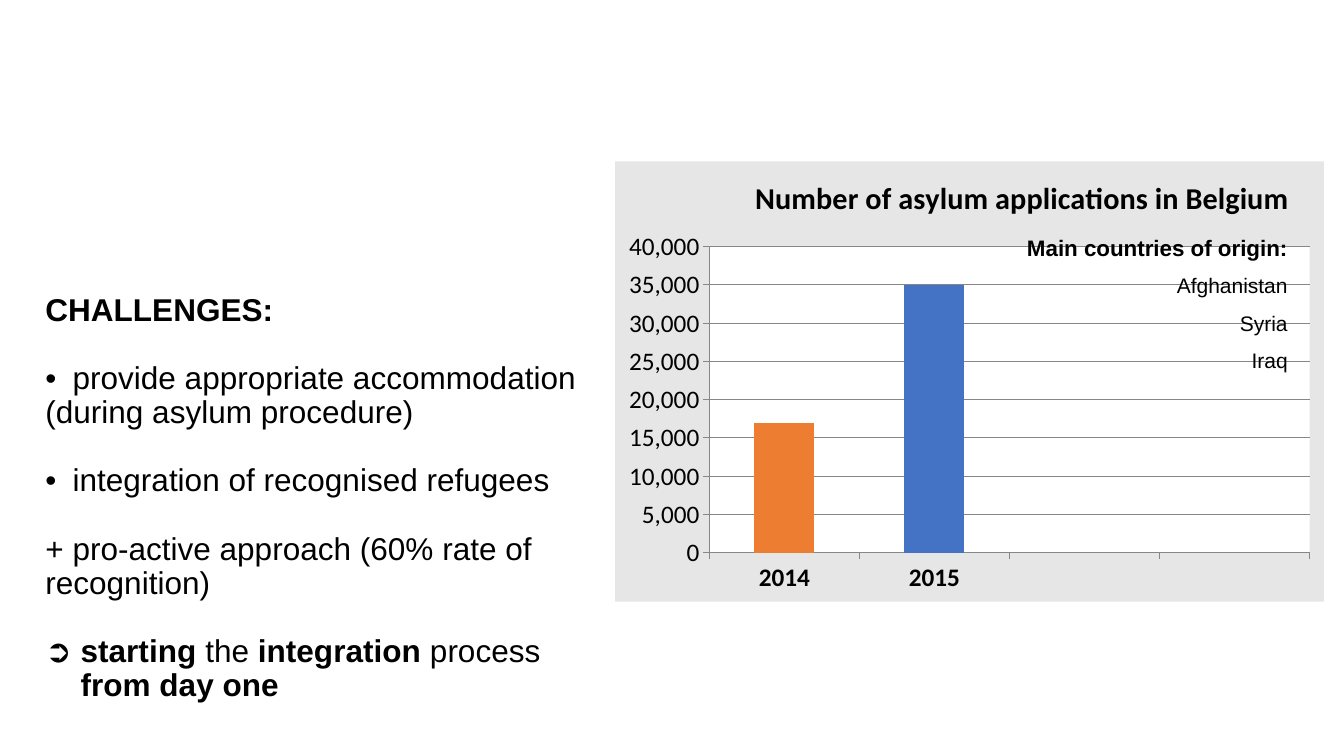
from dataclasses import dataclass

from lxml import etree
from pptx import Presentation
from pptx.chart.data import CategoryChartData
from pptx.dml.color import RGBColor
from pptx.enum.chart import XL_CHART_TYPE, XL_TICK_MARK
from pptx.enum.text import MSO_ANCHOR, MSO_AUTO_SIZE, PP_ALIGN
from pptx.oxml import parse_xml
from pptx.oxml.ns import nsdecls, qn
from pptx.util import Inches, Pt

COLUMN = XL_CHART_TYPE.COLUMN_CLUSTERED
OUTSIDE, NO_TICK = XL_TICK_MARK.OUTSIDE, XL_TICK_MARK.NONE
LEFT, RIGHT = PP_ALIGN.LEFT, PP_ALIGN.RIGHT
BOTTOM = MSO_ANCHOR.BOTTOM
NO_AUTOFIT = MSO_AUTO_SIZE.NONE

SLIDE_W, SLIDE_H = Inches(13.33), Inches(7.5)
GRID_CELL = Inches(0.1)


@dataclass(frozen=True)
class Theme:
    text: RGBColor = RGBColor(0, 0, 0)
    panel: RGBColor = RGBColor(0xE7, 0xE6, 0xE6)
    plot: RGBColor = RGBColor(0xFF, 0xFF, 0xFF)
    grid: RGBColor = RGBColor(0x87, 0x87, 0x87)
    bar: RGBColor = RGBColor(0x44, 0x72, 0xC4)
    first_bar: RGBColor = RGBColor(0xED, 0x7D, 0x31)
    body_font: str = "Arial"
    chart_font: str = "Calibri"
    challenge_size: float = 22.5
    chart_title_size: float = 21.6
    axis_size: float = 18
    origin_head_size: float = 16
    origin_size: float = 15


THEME = Theme()

# Each challenge is a list of (wording, bold) runs
CHALLENGES = [
    [("CHALLENGES:", True)],
    [("•\tprovide appropriate accommodation (during asylum procedure)", False)],
    [("•\tintegration of recognised refugees", False)],
    [("+ pro-active approach (60% rate of recognition)", False)],
    [("➲\tstarting ", True), ("the ", False), ("integration ", True),
     ("process\v", False), ("from day one", True)],
]
APPLICATIONS = {"categories": ["2014", "2015", "", ""],
                "values": [17000, 35000, None, None]}
ORIGINS = ["Main countries of origin:", "Afghanistan", "Syria", "Iraq"]


def grid_box(column, row, columns, rows):
    """Turn columns and rows of the slide grid into a box."""
    return [int(GRID_CELL * cells) for cells in (column, row, columns, rows)]


def apply(target, formats):
    for attribute, value in formats.items():
        setattr(target, attribute, value)


def format_font(font, size, bold=False, name=THEME.body_font):
    apply(font, {"size": Pt(size), "bold": bold, "name": name})
    font.color.rgb = THEME.text


def add_run(paragraph, wording, size, bold):
    """Add a run; a vertical tab at its end becomes a line break."""
    run = paragraph.add_run()
    run.text = wording.rstrip("\v")
    format_font(run.font, size, bold)
    if wording.endswith("\v"):
        paragraph.add_line_break()


def next_paragraph(frame, index):
    return frame.paragraphs[0] if index == 0 else frame.add_paragraph()


def add_challenges(slide, box):
    """Challenges in the title placeholder, set from the bottom up."""
    title = slide.shapes.title
    apply(title, dict(zip(("left", "top", "width", "height"), box)))
    frame = title.text_frame
    apply(frame, {"word_wrap": True, "vertical_anchor": BOTTOM,
                  "auto_size": NO_AUTOFIT})
    for index, runs in enumerate(CHALLENGES):
        paragraph = next_paragraph(frame, index)
        properties = paragraph._p.get_or_add_pPr()
        if runs[0][0].startswith("➲"):
            hang = Inches(0.35)
            properties.set("marL", str(hang))
            properties.set("indent", str(-hang))
        elif runs[0][0].startswith("•"):
            stops = etree.SubElement(properties, qn("a:tabLst"))
            stop = etree.SubElement(stops, qn("a:tab"))
            stop.set("pos", str(Inches(0.27)))
            stop.set("algn", "l")
        apply(paragraph, {"alignment": LEFT, "line_spacing": 0.9,
                          "space_before": Pt(24.5 if index else 0)})
        for wording, bold in runs:
            add_run(paragraph, wording, THEME.challenge_size, bold)


def place_in_chart(parent, before, percents, inner=False):
    """Fix a chart part at percents of the chart area: x, y, width, height."""
    parts = ['<c:layoutTarget val="inner"/>'] if inner else []
    parts += ['<c:xMode val="edge"/>', '<c:yMode val="edge"/>']
    parts += [f'<c:{name} val="{percent / 100}"/>'
              for name, percent in zip("xywh", percents)]
    for old in parent.findall(qn("c:layout")):
        parent.remove(old)
    layout = parse_xml(f'<c:layout {nsdecls("c")}><c:manualLayout>'
                       f'{"".join(parts)}</c:manualLayout></c:layout>')
    if before is None:
        parent.insert(0, layout)
    else:
        parent.find(qn(before)).addnext(layout)


def fill_area(parent, color, before=None):
    area = parse_xml(f'<c:spPr {nsdecls("c", "a")}><a:solidFill>'
                     f'<a:srgbClr val="{color}"/></a:solidFill>'
                     '<a:ln><a:noFill/></a:ln></c:spPr>')
    if before is None:
        parent.append(area)
    else:
        parent.find(qn(before)).addprevious(area)


def add_applications_chart(slide, box):
    """Column chart of asylum applications on a grey panel."""
    data = CategoryChartData(number_format="#,##0")
    data.categories = APPLICATIONS["categories"]
    data.add_series("Series 1", APPLICATIONS["values"])
    chart = slide.shapes.add_chart(COLUMN, *box, data).chart
    chart.has_legend = False
    format_font(chart.font, THEME.axis_size, name=THEME.chart_font)

    # Heading
    chart.has_title = True
    heading = chart.chart_title.text_frame
    heading.text = "Number of asylum applications in Belgium"
    format_font(heading.paragraphs[0].runs[0].font, THEME.chart_title_size,
                True, THEME.chart_font)
    chart.chart_title.include_in_layout = False

    # Axes
    years, counts = chart.category_axis, chart.value_axis
    for axis, bold in ((years, True), (counts, False)):
        apply(axis, {"major_tick_mark": OUTSIDE, "minor_tick_mark": NO_TICK})
        axis.format.line.color.rgb = THEME.grid
        format_font(axis.tick_labels.font, THEME.axis_size, bold,
                    THEME.chart_font)
    apply(counts, {"minimum_scale": 0, "maximum_scale": 40000,
                   "major_unit": 5000, "has_major_gridlines": True})
    counts.major_gridlines.format.line.color.rgb = THEME.grid
    apply(counts.tick_labels, {"number_format": "#,##0",
                               "number_format_is_linked": False})

    # Bars
    plot = chart.plots[0]
    apply(plot, {"gap_width": 150, "vary_by_categories": False})
    applications = plot.series[0]
    for bar, color in ((applications, THEME.bar),
                       (applications.points[0], THEME.first_bar)):
        bar.format.fill.solid()
        bar.format.fill.fore_color.rgb = color

    # Panel, plot area and their places
    space = chart._chartSpace
    plot_area = space.chart.plotArea
    place_in_chart(plot_area, None, (13.3, 19.4, 84.7, 69.5), inner=True)
    place_in_chart(space.chart.find(qn("c:title")), "c:tx", (19, 2.3))
    fill_area(plot_area, THEME.plot)
    fill_area(space, THEME.panel, before="c:txPr")


def add_origins(slide, box):
    """Right-aligned countries of origin over the plot."""
    frame = slide.shapes.add_textbox(*box).text_frame
    frame.word_wrap = True
    for index, origin in enumerate(ORIGINS):
        is_head = index == 0
        paragraph = next_paragraph(frame, index)
        if is_head:
            paragraph._p.get_or_add_pPr().set("marR", str(Inches(0.08)))
        apply(paragraph, {"alignment": RIGHT, "line_spacing": 0.9,
                          "space_before": Pt(0 if is_head else 10.5)})
        size = THEME.origin_head_size if is_head else THEME.origin_size
        add_run(paragraph, origin, size, is_head)


def main():
    deck = Presentation()
    apply(deck, {"slide_width": SLIDE_W, "slide_height": SLIDE_H})
    title_only = deck.slide_layouts[5]
    slide = deck.slides.add_slide(title_only)
    add_challenges(slide, grid_box(3.5, 28.5, 63.2, 41.8))
    add_applications_chart(slide, grid_box(61, 16, 70.3, 43.7))
    add_origins(slide, grid_box(97.6, 23, 31.9, 17.3))
    deck.save("out.pptx")


if __name__ == "__main__":
    main()
